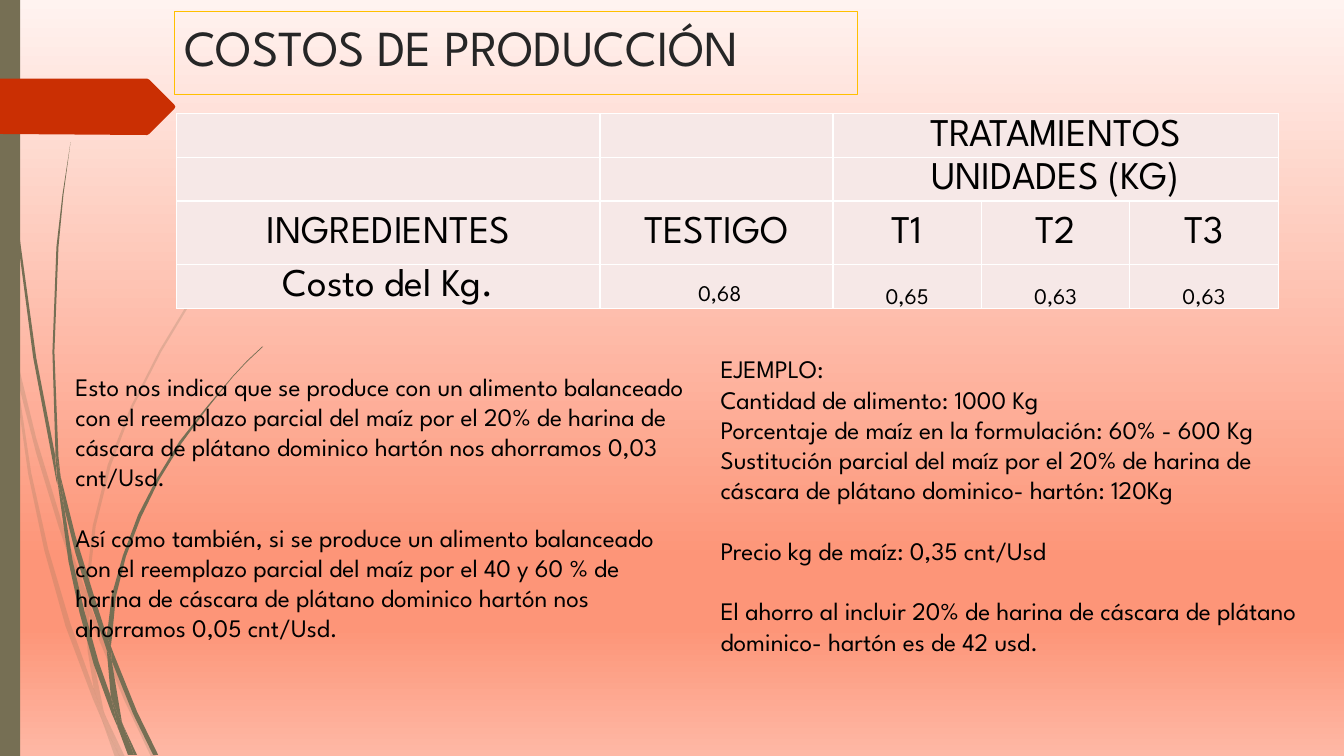
from lxml import etree
from pptx import Presentation
from pptx.dml.color import RGBColor
from pptx.enum.shapes import MSO_SHAPE
from pptx.enum.text import MSO_ANCHOR, PP_ALIGN
from pptx.oxml.ns import qn
from pptx.util import Cm, Pt

RECTANGLE = MSO_SHAPE.RECTANGLE
LEFT, CENTER = PP_ALIGN.LEFT, PP_ALIGN.CENTER
TOP, MIDDLE, BOTTOM = MSO_ANCHOR.TOP, MSO_ANCHOR.MIDDLE, MSO_ANCHOR.BOTTOM

FONT = "League Spartan"
OLIVE, RED, GOLD, INK = "766F54", "CA2F03", "FFC000", "262626"
BLACK, WHITE, CELL = "000000", "FFFFFF", "F6E8E7"
BACKGROUND = [(0, "FFF3F0"), (74, "FD9578"), (83, "FD9578"), (100, "FEB8A5")]

TITLE = "COSTOS DE PRODUCCIÓN"
TABLE = [
    ["", "", "TRATAMIENTOS", "", ""],
    ["", "", "UNIDADES (KG)", "", ""],
    ["INGREDIENTES", "TESTIGO", "T1", "T2", "T3"],
    ["Costo del Kg.", "0,68", "0,65", "0,63", "0,63"],
]
COLUMN_WIDTHS = [10.67, 5.87, 3.74, 3.74, 3.74]
ROW_HEIGHTS = [1.07, 1.07, 1.6, 1.07]

# Each paragraph: text, blank lines above it
EXAMPLE = [
    ("EJEMPLO:", 0),
    ("Cantidad de alimento: 1000 Kg", 0),
    ("Porcentaje de maíz en la formulación: 60% - 600 Kg", 0),
    ("Sustitución parcial del maíz por el 20% de harina de cáscara de plátano "
     "dominico- hartón: 120Kg", 0),
    ("Precio kg de maíz: 0,35 cnt/Usd", 1),
    ("El ahorro al incluir 20% de harina de cáscara de plátano dominico- hartón "
     "es de 42 usd.", 1),
]
SAVINGS = [
    ("Esto nos indica que se produce con un alimento balanceado con el reemplazo "
     "parcial del maíz por el 20% de harina de cáscara de plátano dominico hartón "
     "nos ahorramos 0,03 cnt/Usd.", 0),
    ("Así como también, si se produce un alimento balanceado con el reemplazo "
     "parcial del maíz por el 40 y 60 % de harina de cáscara de plátano dominico "
     "hartón nos ahorramos 0,05 cnt/Usd.", 1),
]

# Outlines on a grid of 0.0254 cm
GRID = Cm(0.0254)
PALE_GRASS = [
    [(11, 350), (9, 322), (0, 282), (0, 299), (10, 344)],
    [(58, 522), (84, 599), (85, 586), (62, 520), (36, 435), (14, 345), (17, 376), (36, 450)],
    [(92, 607), (88, 596), (88, 610), (123, 694), (150, 751), (155, 751), (127, 692)],
    [(119, 751), (124, 751), (105, 711)],
    [(93, 683), (70, 619), (48, 545), (31, 469), (17, 376), (11, 350), (28, 470),
     (44, 546), (65, 621), (92, 693), (101, 714), (99, 707)],
    [(84, 599), (87, 646), (93, 683), (96, 692), (105, 711), (103, 706), (91, 646),
     (88, 610), (88, 608)],
    [(88, 584), (95, 522), (110, 462), (132, 404), (160, 349), (192, 296), (229, 245),
     (268, 198), (290, 175), (312, 154), (312, 153), (289, 175), (268, 197), (228, 244),
     (190, 295), (158, 348), (130, 403), (107, 461), (92, 522), (85, 584), (85, 586), (88, 596)],
    [(101, 714), (114, 751), (119, 751)],
    [(88, 608), (88, 610), (88, 596), (85, 586), (84, 599)],
    [(96, 692), (93, 683), (99, 707), (101, 714), (119, 751), (105, 711)],
]
DARK_GRASS = [
    [(7, 110), (17, 233), (33, 355), (56, 477), (57, 481), (55, 457), (55, 453),
     (36, 355), (19, 232), (8, 109), (5, 48), (4, 0), (3, 0), (4, 48)],
    [(88, 592), (106, 645), (106, 633), (106, 631), (93, 590), (75, 532), (60, 472),
     (64, 505), (75, 549)],
    [(113, 649), (110, 641), (111, 656), (132, 708), (152, 749), (157, 749), (136, 706)],
    [(110, 691), (98, 657), (84, 607), (72, 556), (64, 505), (57, 477), (68, 557),
     (79, 608), (93, 659), (111, 708), (117, 722), (116, 717)],
    [(60, 472), (58, 453), (54, 349), (58, 245), (63, 193), (70, 141), (62, 193),
     (56, 245), (52, 349), (55, 449)],
    [(133, 749), (136, 749), (122, 719)],
    [(57, 477), (64, 505), (60, 472), (55, 449), (55, 453)],
    [(111, 633), (115, 592), (125, 552), (140, 513), (158, 476), (180, 440), (205, 406),
     (231, 374), (245, 359), (261, 344), (260, 344), (245, 358), (231, 373), (204, 405),
     (178, 438), (156, 474), (137, 511), (122, 551), (111, 590), (106, 631), (110, 641)],
    [(117, 722), (127, 749), (131, 749)],
    [(106, 645), (110, 691), (116, 706), (122, 719), (121, 716), (111, 656), (109, 651)],
    [(106, 645), (109, 651), (111, 656), (110, 641), (106, 631), (106, 633)],
    [(116, 706), (110, 691), (116, 717), (117, 722), (130, 749), (133, 749), (122, 719)],
]
TAG = [(0, 78), (146, 78), (148, 79), (173, 104), (174, 106), (173, 108), (148, 133),
       (146, 134), (0, 133)]


def color(hex_string):
    return RGBColor.from_string(hex_string)


def write(frame, paragraphs, size, ink=BLACK, align=LEFT, anchor=TOP, line_spacing=1.0):
    """Fill a text frame or a table cell's frame with (text, blank lines above) pairs."""
    frame.word_wrap = True
    frame.vertical_anchor = anchor
    for index, (text, blank_lines) in enumerate(paragraphs):
        paragraph = frame.add_paragraph() if index else frame.paragraphs[0]
        paragraph.alignment = align
        paragraph.line_spacing = line_spacing
        paragraph.space_before = Pt(size * 1.2 * blank_lines)
        paragraph.font.size = Pt(size)
        run = paragraph.add_run()
        run.text = text
        run.font.name = FONT
        run.font.size = Pt(size)
        run.font.color.rgb = color(ink)


def add_text(slide, box, paragraphs, **text_format):
    shape = slide.shapes.add_textbox(*(Cm(length) for length in box))
    write(shape.text_frame, paragraphs, **text_format)
    return shape


def paint(shape, fill, opacity=100):
    shape.shadow.inherit = False
    shape.fill.solid()
    shape.fill.fore_color.rgb = color(fill)
    shape.line.fill.background()
    if opacity < 100:
        tint = shape.element.spPr.find(".//" + qn("a:srgbClr"))
        etree.SubElement(tint, qn("a:alpha"), val=str(opacity * 1000))


def add_outline(shapes, points, fill, opacity=100):
    builder = shapes.build_freeform(*points[0], scale=GRID)
    builder.add_line_segments(points[1:], close=True)
    paint(builder.convert_to_shape(), fill, opacity)


def set_background(slide):
    fill = slide.background.fill
    fill.gradient()
    fill.gradient_angle = 270
    stops = slide.element.find(".//" + qn("a:gsLst"))
    for stop in list(stops):
        stops.remove(stop)
    for position, shade in BACKGROUND:
        stop = etree.SubElement(stops, qn("a:gs"), pos=str(position * 1000))
        etree.SubElement(stop, qn("a:srgbClr"), val=shade)


def style_cell(cell):
    cell.margin_left = cell.margin_right = cell.margin_top = Cm(0.03)
    cell.margin_bottom = 0
    properties = cell._tc.get_or_add_tcPr()
    for side in ("a:lnL", "a:lnR", "a:lnT", "a:lnB"):
        border = etree.SubElement(properties, qn(side), w=str(Pt(1)))
        solid = etree.SubElement(border, qn("a:solidFill"))
        etree.SubElement(solid, qn("a:srgbClr"), val=WHITE)
    cell.fill.solid()
    cell.fill.fore_color.rgb = color(CELL)


def add_cost_table(slide):
    table = slide.shapes.add_table(
        len(TABLE), len(COLUMN_WIDTHS), Cm(4.45), Cm(2.87),
        Cm(sum(COLUMN_WIDTHS)), Cm(sum(ROW_HEIGHTS))).table
    for column, width in zip(table.columns, COLUMN_WIDTHS):
        column.width = Cm(width)
    for row, height in zip(table.rows, ROW_HEIGHTS):
        row.height = Cm(height)
    for row_index, row in enumerate(TABLE):
        for column_index, text in enumerate(row):
            cell = table.cell(row_index, column_index)
            style_cell(cell)
            if text:
                is_cost = text[0].isdigit()
                write(cell.text_frame, [(text, 0)], size=16 if is_cost else 28,
                      align=CENTER, line_spacing=0.9)
                cell.vertical_anchor = BOTTOM if is_cost else MIDDLE
    for row_index in (0, 1):
        table.cell(row_index, 2).merge(table.cell(row_index, 4))
    control = table.cell(3, 1)
    control.margin_left, control.margin_bottom = Cm(0.2), Cm(0.08)


def main():
    presentation = Presentation()
    presentation.slide_width, presentation.slide_height = Cm(33.87), Cm(19.05)
    slide = presentation.slides.add_slide(presentation.slide_layouts[6])
    set_background(slide)
    for blades, opacity in ((PALE_GRASS, 20), (DARK_GRASS, 100)):
        group = slide.shapes.add_group_shape()
        for blade in blades:
            add_outline(group.shapes, blade, OLIVE, opacity)
    side_bar = slide.shapes.add_shape(RECTANGLE, 0, 0, Cm(0.51), Cm(19.05))
    paint(side_bar, OLIVE)
    add_outline(slide.shapes, TAG, RED)
    title = add_text(slide, (4.39, 0.28, 17.22, 2.11), [(TITLE, 0)], size=36, ink=INK)
    title.line.color.rgb = color(GOLD)
    title.line.width = Pt(0.75)
    add_cost_table(slide)
    add_text(slide, (17.91, 8.79, 15.9, 8.71), EXAMPLE, size=18)
    add_text(slide, (1.65, 9.22, 15.9, 7.19), SAVINGS, size=18)
    presentation.save("out.pptx")


if __name__ == "__main__":
    main()
